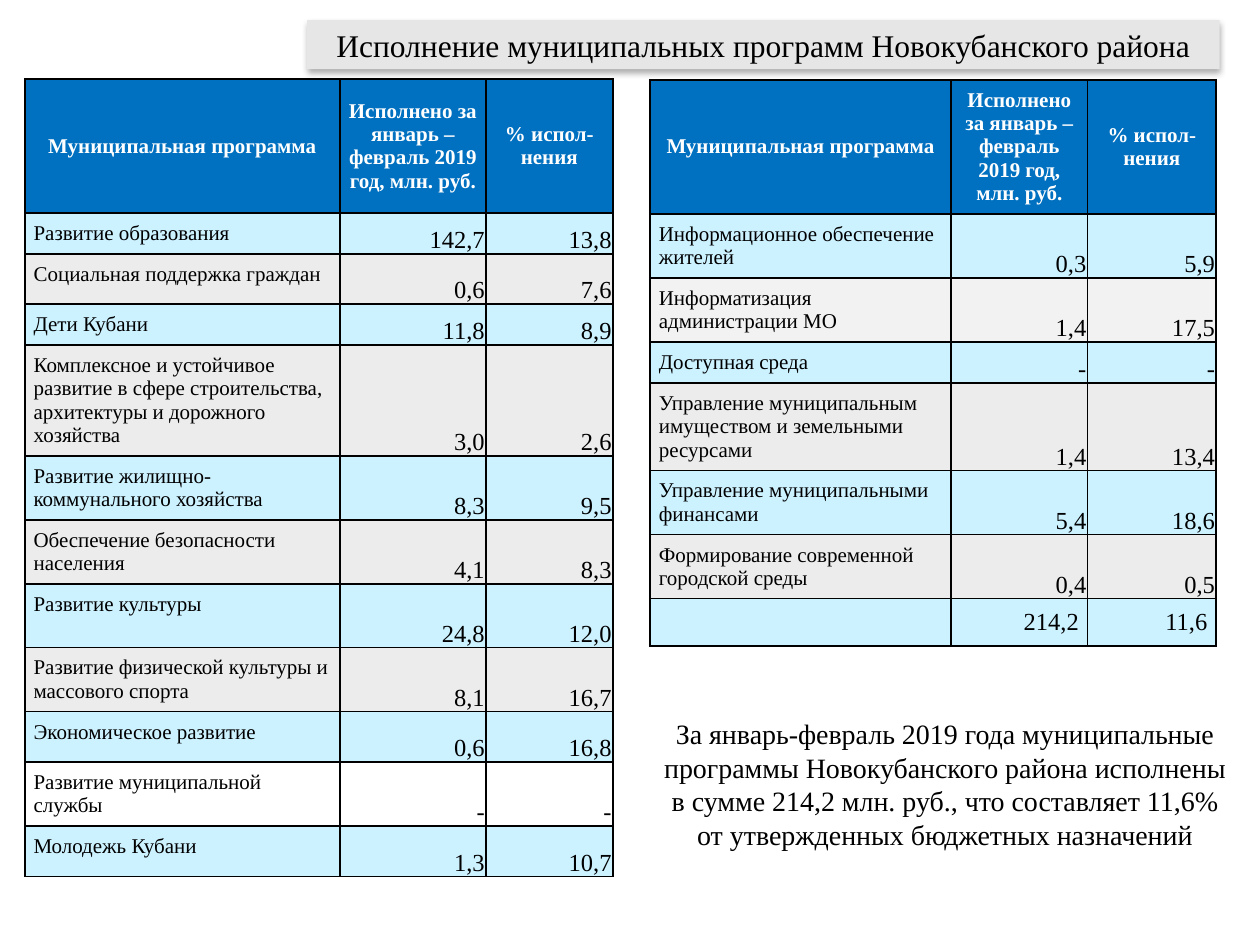
from dataclasses import dataclass

from lxml.etree import SubElement
from pptx import Presentation
from pptx.dml.color import RGBColor
from pptx.enum.shapes import MSO_SHAPE
from pptx.enum.text import MSO_ANCHOR, PP_ALIGN
from pptx.oxml.ns import qn
from pptx.util import Pt

FONT = "Times New Roman"
BLACK, WHITE = "000000", "FFFFFF"
HEADER_BLUE, LIGHT_BLUE, GRAY, PALE_GRAY = "0070C0", "CDF2FF", "ECECEC", "F2F2F2"
HEADINGS = (
    "Муниципальная программа",
    "Исполнено за январь – февраль 2019 год, млн. руб.",
    "% испол-нения",
)
HEADER_HEIGHT = 76.5


@dataclass
class Program:
    name: str
    executed: str
    percent: str
    fill: str
    height: float


@dataclass
class ProgramTable:
    left: float
    top: float
    widths: tuple[float, ...]
    programs: list[Program]


@dataclass
class CellStyle:
    size: float
    alignment: PP_ALIGN
    anchor: MSO_ANCHOR
    margins: tuple[float, float, float, float]  # left, top, right, bottom
    color: str = BLACK
    bold: bool = False


WIDE, TIGHT = (5, 5, 5, 5), (0.7, 0.7, 0.7, 0)
HEADER = CellStyle(12, PP_ALIGN.CENTER, MSO_ANCHOR.MIDDLE, WIDE, WHITE, True)
NAME = CellStyle(12, PP_ALIGN.LEFT, MSO_ANCHOR.TOP, WIDE)
VALUE = CellStyle(14, PP_ALIGN.RIGHT, MSO_ANCHOR.BOTTOM, TIGHT)
TOTAL = CellStyle(14, PP_ALIGN.RIGHT, MSO_ANCHOR.MIDDLE, WIDE)

LEFT_TABLE = ProgramTable(14.2, 45.2, (180, 83.5, 72.5), [
    Program("Развитие образования", "142,7", "13,8", LIGHT_BLUE, 23),
    Program("Социальная поддержка граждан", "0,6", "7,6", GRAY, 28.8),
    Program("Дети Кубани", "11,8", "8,9", LIGHT_BLUE, 23),
    Program("Комплексное и устойчивое развитие в сфере строительства, "
            "архитектуры и дорожного хозяйства", "3,0", "2,6", GRAY, 63),
    Program("Развитие жилищно-коммунального хозяйства", "8,3", "9,5", LIGHT_BLUE, 36.5),
    Program("Обеспечение безопасности населения", "4,1", "8,3", GRAY, 36.5),
    Program("Развитие культуры", "24,8", "12,0", LIGHT_BLUE, 36.2),
    Program("Развитие физической культуры и массового спорта", "8,1", "16,7", GRAY, 36.7),
    Program("Экономическое развитие", "0,6", "16,8", LIGHT_BLUE, 28.8),
    Program("Развитие муниципальной службы", "-", "-", WHITE, 36.5),
    Program("Молодежь Кубани", "1,3", "10,7", LIGHT_BLUE, 28.8),
])
RIGHT_TABLE = ProgramTable(371.5, 45.6, (172, 78, 73.5), [
    Program("Информационное обеспечение жителей", "0,3", "5,9", LIGHT_BLUE, 36.4),
    Program("Информатизация администрации МО", "1,4", "17,5", PALE_GRAY, 36.4),
    Program("Доступная среда", "-", "-", LIGHT_BLUE, 23),
    Program("Управление муниципальным имуществом и земельными ресурсами",
            "1,4", "13,4", GRAY, 49.7),
    Program("Управление муниципальными финансами", "5,4", "18,6", LIGHT_BLUE, 36.4),
    Program("Формирование современной городской среды", "0,4", "0,5", GRAY, 36.4),
    Program("", "214,2", "11,6", LIGHT_BLUE, 25),
])


def rgb(color: str) -> RGBColor:
    return RGBColor.from_string(color)


def format_text(text_frame, size: float, alignment: PP_ALIGN,
                color: str = BLACK, bold: bool = False) -> None:
    for paragraph in text_frame.paragraphs:
        paragraph.alignment = alignment
        for run in paragraph.runs:
            run.font.name = FONT
            run.font.size = Pt(size)
            run.font.bold = bold
            run.font.color.rgb = rgb(color)
        if not paragraph.runs:  # keeps an empty cell from growing
            SubElement(paragraph._p, qn("a:endParaRPr"), sz=str(int(size * 100)))


def add_borders(cell) -> None:
    properties = cell._tc.get_or_add_tcPr()
    for position, side in enumerate(("lnL", "lnR", "lnT", "lnB")):
        line = SubElement(properties, qn(f"a:{side}"), w=str(Pt(1)))
        fill = SubElement(line, qn("a:solidFill"))
        SubElement(fill, qn("a:srgbClr"), val=BLACK)
        properties.insert(position, line)


def fill_cell(cell, text: str, fill: str, style: CellStyle) -> None:
    cell.fill.solid()
    cell.fill.fore_color.rgb = rgb(fill)
    (cell.margin_left, cell.margin_top,
     cell.margin_right, cell.margin_bottom) = map(Pt, style.margins)
    cell.vertical_anchor = style.anchor
    cell.text_frame.text = text
    format_text(cell.text_frame, style.size, style.alignment, style.color, style.bold)
    add_borders(cell)


def add_program_table(slide, data: ProgramTable) -> None:
    heights = [HEADER_HEIGHT] + [program.height for program in data.programs]
    table = slide.shapes.add_table(
        len(heights), len(data.widths), Pt(data.left), Pt(data.top),
        Pt(sum(data.widths)), Pt(sum(heights))).table
    table.first_row = table.horz_banding = False
    for column, width in zip(table.columns, data.widths):
        column.width = Pt(width)
    for row, height in zip(table.rows, heights):
        row.height = Pt(height)

    for cell, heading in zip(table.rows[0].cells, HEADINGS):
        fill_cell(cell, heading, HEADER_BLUE, HEADER)
    for index, program in enumerate(data.programs, start=1):
        value_style = VALUE if program.name else TOTAL
        name_style = NAME if program.name else TOTAL
        texts = (program.name, program.executed, program.percent)
        styles = (name_style, value_style, value_style)
        for cell, text, style in zip(table.rows[index].cells, texts, styles):
            fill_cell(cell, text, program.fill, style)


def add_title(slide, text: str) -> None:
    shape = slide.shapes.add_shape(
        MSO_SHAPE.RECTANGLE, Pt(175.5), Pt(11.5), Pt(521.5), Pt(28))
    shape.fill.solid()
    shape.fill.fore_color.rgb = rgb("E6E6E6")
    shape.line.fill.background()
    shape.shadow.inherit = False
    # Soft shadow straight below
    effects = shape._element.spPr.find(qn("a:effectLst"))
    shadow = SubElement(effects, qn("a:outerShdw"), blurRad=str(Pt(3.5)),
                        dist=str(Pt(2.2)), dir="5400000", rotWithShape="0")
    color = SubElement(shadow, qn("a:srgbClr"), val=BLACK)
    SubElement(color, qn("a:alpha"), val="32000")
    shape.text_frame.word_wrap = True
    shape.text_frame.vertical_anchor = MSO_ANCHOR.MIDDLE
    shape.text_frame.text = text
    format_text(shape.text_frame, 18, PP_ALIGN.CENTER)


def add_summary(slide, text: str) -> None:
    text_box = slide.shapes.add_textbox(Pt(369.4), Pt(406), Pt(341.3), Pt(85))
    text_box.text_frame.word_wrap = True
    text_box.text_frame.text = text
    format_text(text_box.text_frame, 16, PP_ALIGN.CENTER)


def main() -> None:
    presentation = Presentation()
    presentation.slide_width, presentation.slide_height = Pt(720), Pt(540)
    slide = presentation.slides.add_slide(presentation.slide_layouts[6])

    # Heading
    add_title(slide, "Исполнение муниципальных программ Новокубанского района")
    # Program tables
    for data in (RIGHT_TABLE, LEFT_TABLE):
        add_program_table(slide, data)
    # Summary
    add_summary(slide, "За январь-февраль 2019 года муниципальные программы "
                       "Новокубанского района исполнены в сумме 214,2 млн. руб., "
                       "что составляет 11,6% от утвержденных бюджетных назначений")
    presentation.save("out.pptx")


if __name__ == "__main__":
    main()
